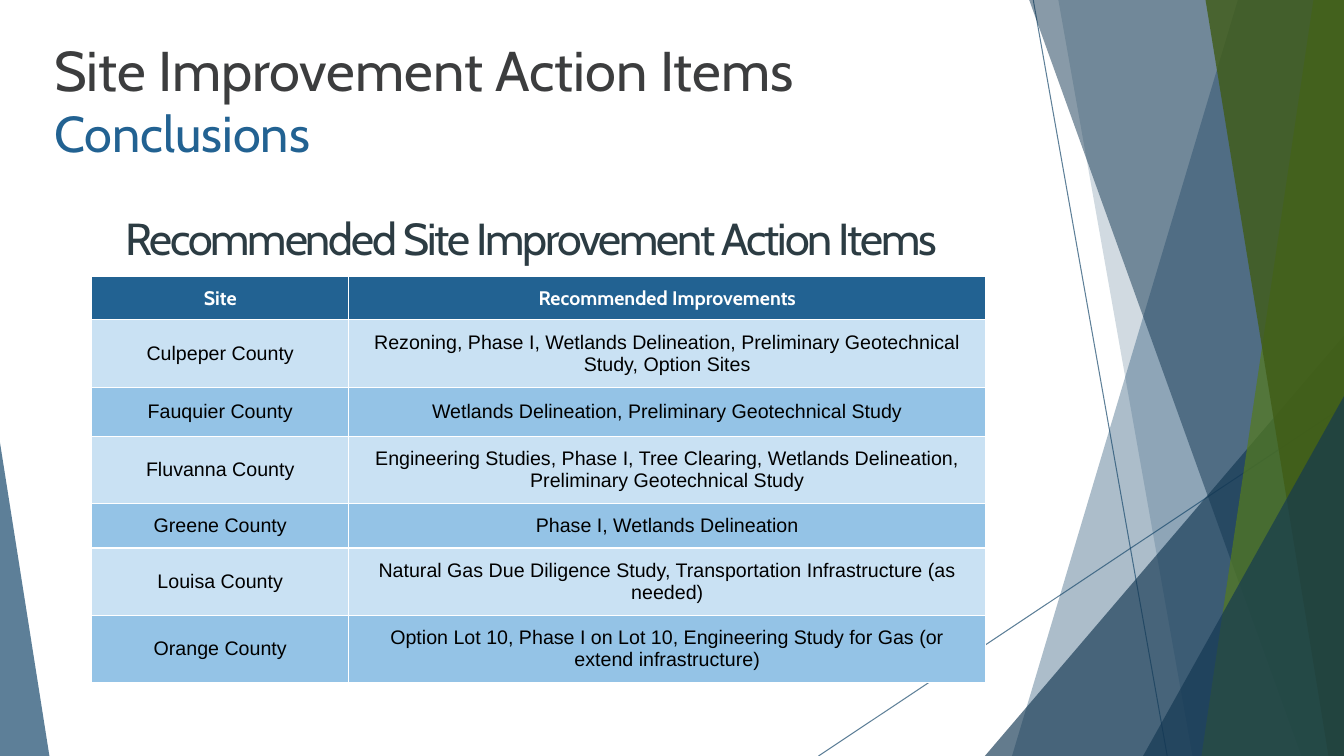
from lxml import etree
from pptx import Presentation
from pptx import util as u
from pptx.dml.color import RGBColor
from pptx.enum import shapes, text
from pptx.oxml import ns

WIDTH, HEIGHT = u.Inches(13.333), u.Inches(7.5)
COLORS = {
    "steel": "19496D", "navy": "133752", "green": "557B1D", "olive": "405C16",
    "title": "3C3D3E", "blue": "226292", "heading": "2C3C43", "white": "FFFFFF",
    "black": "000000", "pale": "C9E1F3", "sky": "94C3E6",
}
COLUMNS = (19.12, 47.4)
SITES = (
    ("Culpeper County", "Rezoning, Phase I, Wetlands Delineation, "
     "Preliminary Geotechnical Study, Option Sites", 8.5),
    ("Fauquier County", "Wetlands Delineation, Preliminary Geotechnical Study", 6.5),
    ("Fluvanna County", "Engineering Studies, Phase I, Tree Clearing, "
     "Wetlands Delineation, Preliminary Geotechnical Study", 8.5),
    ("Greene County", "Phase I, Wetlands Delineation", 5.87),
    ("Louisa County", "Natural Gas Due Diligence Study, "
     "Transportation Infrastructure (as needed)", 8.5),
    ("Orange County", "Option Lot 10, Phase I on Lot 10, "
     "Engineering Study for Gas (or extend infrastructure)", 8.5),
)


def across(percent):
    """Turn a percentage of the slide width into a length."""
    return u.Emu(round(WIDTH * percent / 100))


def down(percent):
    """Turn a percentage of the slide height into a length."""
    return u.Emu(round(HEIGHT * percent / 100))


def box(left, top, width, height):
    """Turn four percentages into a position and size."""
    return across(left), down(top), across(width), down(height)


def rgb(color):
    """Look up a named color."""
    return RGBColor.from_string(COLORS[color])


def add_alpha(fill_parent, opacity):
    """Set the opacity of the solid fill found under an element."""
    tint = fill_parent.find(ns.qn("a:solidFill"))[0]
    etree.SubElement(tint, ns.qn("a:alpha"), val=str(opacity * 1000))


def paint(facet, color, opacity):
    """Give a background facet its translucent fill, without outline or shadow."""
    facet.fill.solid()
    facet.fill.fore_color.rgb = rgb(color)
    add_alpha(facet.element.spPr, opacity)
    facet.line.fill.background()
    facet.shadow.inherit = False


def add_band(slide, top_left, bottom_left, color, opacity):
    """Draw a full-height band that runs to the right edge."""
    outline = slide.shapes.build_freeform(across(top_left), 0)
    outline.add_line_segments(
        [(across(100), 0), (across(100), HEIGHT), (across(bottom_left), HEIGHT)])
    paint(outline.convert_to_shape(), color, opacity)


def add_corner(slide, place, apex, color, opacity):
    """Draw a triangle whose apex sits at a share of its width."""
    corner = slide.shapes.add_shape(shapes.MSO_SHAPE.ISOSCELES_TRIANGLE, *box(*place))
    corner.adjustments[0] = apex
    paint(corner, color, opacity)


def add_ray(slide, start, end):
    """Draw a thin translucent line between two points."""
    ray = slide.shapes.add_connector(
        shapes.MSO_CONNECTOR.STRAIGHT, across(start[0]), down(start[1]),
        across(end[0]), down(end[1]))
    ray.line.color.rgb = rgb("steel")
    ray.line.width = u.Pt(0.75)
    stroke = ray.element.spPr.find(ns.qn("a:ln"))
    add_alpha(stroke, 70)
    etree.SubElement(ray.element.spPr, ns.qn("a:effectLst"))


def write(paragraph, words, *, size, color, font="Cabin", bold=False,
          align=text.PP_ALIGN.LEFT, tracking=None):
    """Add one formatted run to a paragraph."""
    paragraph.alignment = align
    run = paragraph.add_run()
    run.text = words
    run.font.size = u.Pt(size)
    run.font.name = font
    run.font.bold = bold
    run.font.color.rgb = rgb(color)
    if tracking is not None:
        run.font._element.set("spc", str(round(tracking * 100)))


def add_frame(slide, place):
    """Add a wrapping text box and return its text frame."""
    frame = slide.shapes.add_textbox(*box(*place)).text_frame
    frame.word_wrap = True
    return frame


def add_borders(cell):
    """Outline a table cell in thin white."""
    properties = cell._tc.get_or_add_tcPr()
    for side in ("lnL", "lnR", "lnT", "lnB"):
        border = etree.SubElement(properties, ns.qn(f"a:{side}"), w=str(u.Pt(1)))
        fill = etree.SubElement(border, ns.qn("a:solidFill"))
        etree.SubElement(fill, ns.qn("a:srgbClr"), val=COLORS["white"])


def fill_cell(cell, words, background, **style):
    """Format one table cell and write its words."""
    add_borders(cell)
    cell.fill.solid()
    cell.fill.fore_color.rgb = rgb(background)
    cell.vertical_anchor = text.MSO_ANCHOR.MIDDLE
    cell.margin_left = cell.margin_right = u.Inches(0.1)
    cell.margin_top = cell.margin_bottom = u.Inches(0.1)
    write(cell.text_frame.paragraphs[0], words, size=14,
          align=text.PP_ALIGN.CENTER, **style)


def add_backdrop(slide):
    """Draw the layered rays, bands and corners."""
    add_ray(slide, (76.88, 0), (86.85, 100))
    add_ray(slide, (100, 53.73), (60.9, 100))
    add_band(slide, 92.1, 75.3, "steel", 36)
    add_band(slide, 78.75, 88.73, "steel", 20)
    add_corner(slide, (73.28, 44.4, 26.72, 55.6), 1, "navy", 66)
    add_band(slide, 76.58, 96.83, "navy", 50)
    add_band(slide, 97.73, 89.4, "green", 70)
    add_band(slide, 89.7, 98.85, "olive", 80)
    add_corner(slide, (85.05, 52.4, 14.95, 47.6), 1, "navy", 66)
    add_corner(slide, (0, 58.53, 3.68, 41.47), 0, "steel", 70)


def add_titles(slide):
    """Write the slide title and the table heading."""
    title = add_frame(slide, (3.3, 4, 78.15, 18.8)).paragraphs[0]
    write(title, "Site Improvement Action Items", size=40, color="title")
    title.add_line_break()
    write(title, "Conclusions", size=36, color="blue")

    heading = add_frame(slide, (5.7, 28.4, 67.65, 7.6))
    heading.margin_left = heading.margin_right = 0
    heading.margin_top = heading.margin_bottom = 0
    heading.paragraphs[0].line_spacing = 0.95
    write(heading.paragraphs[0], "Recommended Site Improvement Action Items",
          size=32, color="heading", align=text.PP_ALIGN.CENTER, tracking=-1.5)


def add_site_table(slide):
    """Build the table of improvements by site."""
    records = (("Site", "Recommended Improvements", 5.73), *SITES)
    place = box(6.83, 36.53, sum(COLUMNS), sum(record[2] for record in records))
    table = slide.shapes.add_table(len(records), len(COLUMNS), *place).table
    for column, share in zip(table.columns, COLUMNS):
        column.width = across(share)
    for index, (*entries, share) in enumerate(records):
        table.rows[index].height = down(share)
        if index == 0:
            background, style = "blue", {"color": "white", "bold": True}
        else:
            background = "pale" if index % 2 else "sky"
            style = {"color": "black", "font": "Arial"}
        for cell, words in zip(table.rows[index].cells, entries):
            fill_cell(cell, words, background, **style)


def main():
    """Build and save the slide."""
    deck = Presentation()
    deck.slide_width, deck.slide_height = WIDTH, HEIGHT
    slide = deck.slides.add_slide(deck.slide_layouts[6])
    add_backdrop(slide)
    add_titles(slide)
    add_site_table(slide)
    deck.save("out.pptx")


if __name__ == "__main__":
    main()
